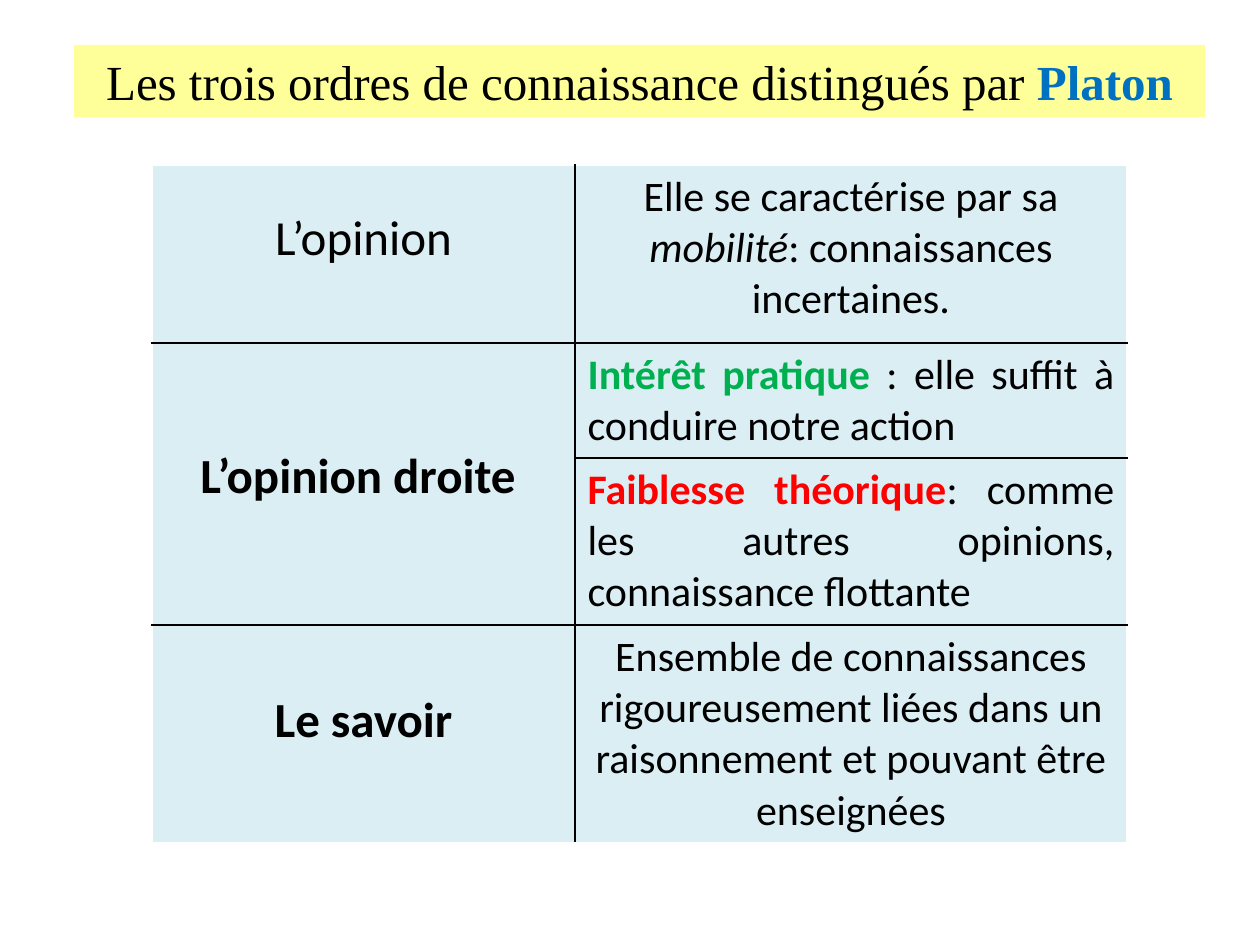
"""Build a slide with a table of Plato's three orders of knowledge."""
import pptx
import pptx.dml.color
import pptx.enum.text
import pptx.oxml
import pptx.oxml.ns
import pptx.util

RGBColor = pptx.dml.color.RGBColor
ALIGN = pptx.enum.text.PP_ALIGN
PX = 914400 / 126

BLACK = RGBColor(0x00, 0x00, 0x00)
WHITE = RGBColor(0xFF, 0xFF, 0xFF)
YELLOW = RGBColor(0xFF, 0xFF, 0x99)
PALE_BLUE = RGBColor(0xDB, 0xEE, 0xF4)
BLUE = RGBColor(0x00, 0x70, 0xC0)
GREEN = RGBColor(0x00, 0xB0, 0x50)
RED = RGBColor(0xFF, 0x00, 0x00)

PLAIN = {}
BOLD = {"bold": True}
ITALIC = {"italic": True}

TITLE = [("Les trois ordres de connaissance distingués par ", PLAIN),
         ("Platon", {"bold": True, "color": BLUE})]
TITLE_BOX = (74, 45, 1131, 72)

TABLE_LEFT, TABLE_TOP = 152, 165
COLUMN_WIDTHS = [423, 552]
ROW_HEIGHTS = [178, 115, 167, 217]

ORDERS = [
    (0, 44, [("L’opinion", PLAIN)]),
    (1, 104, [("L’opinion droite ", BOLD)]),
    (3, 66, [("Le savoir", BOLD)]),
]
DESCRIPTIONS = [
    (ALIGN.CENTER, [("Elle se caractérise par sa ", PLAIN), ("mobilité", ITALIC),
                    (": connaissances incertaines.", PLAIN)]),
    (ALIGN.JUSTIFY, [("Intérêt pratique ", {"bold": True, "color": GREEN}),
                     (": elle suffit à conduire notre action ", PLAIN)]),
    (ALIGN.JUSTIFY, [("Faiblesse théorique", {"bold": True, "color": RED}),
                     (": comme les autres opinions, connaissance flottante ", PLAIN)]),
    (ALIGN.CENTER, [("Ensemble de connaissances rigoureusement liées dans un "
                     "raisonnement et pouvant être enseignées", PLAIN)]),
]


def px(length):
    return pptx.util.Emu(round(length * PX))


def write_text(text_frame, runs, font_name, size, alignment):
    paragraph = text_frame.paragraphs[0]
    paragraph.alignment = alignment
    paragraph.font.name = font_name
    paragraph.font.size = pptx.util.Pt(size)
    for text, style in runs:
        run = paragraph.add_run()
        run.text = text
        run.font.bold = style.get("bold", False)
        run.font.italic = style.get("italic", False)
        run.font.color.rgb = style.get("color", BLACK)


def add_border(cell, side, color):
    properties = cell._tc.get_or_add_tcPr()
    properties.append(pptx.oxml.parse_xml(
        f'<a:ln{side} {pptx.oxml.ns.nsdecls("a")} w="12700"><a:solidFill>'
        f'<a:srgbClr val="{color}"/></a:solidFill></a:ln{side}>'))


def format_cell(table, row, column):
    cell = table.cell(row, column)
    outer_edges = {"L": column == 0, "R": column == len(COLUMN_WIDTHS) - 1,
                   "T": row == 0, "B": row == len(ROW_HEIGHTS) - 1}
    for side, is_outer in outer_edges.items():
        if not (cell.is_spanned and side == "T"):
            add_border(cell, side, WHITE if is_outer else BLACK)
    cell.fill.solid()
    cell.fill.fore_color.rgb = PALE_BLUE


def add_title(slide):
    title = slide.shapes.title
    title.left, title.top, title.width, title.height = map(px, TITLE_BOX)
    title.fill.solid()
    title.fill.fore_color.rgb = YELLOW
    text_frame = title.text_frame
    text_frame.auto_size = pptx.enum.text.MSO_AUTO_SIZE.NONE
    text_frame.vertical_anchor = pptx.enum.text.MSO_ANCHOR.TOP
    write_text(text_frame, TITLE, "Times New Roman", 28, ALIGN.CENTER)


def add_orders_table(slide):
    table = slide.shapes.add_table(
        len(ROW_HEIGHTS), len(COLUMN_WIDTHS), px(TABLE_LEFT), px(TABLE_TOP),
        px(sum(COLUMN_WIDTHS)), px(sum(ROW_HEIGHTS))).table
    table.first_row = table.horz_banding = False
    for column, width in zip(table.columns, COLUMN_WIDTHS):
        column.width = px(width)
    for row, height in zip(table.rows, ROW_HEIGHTS):
        row.height = px(height)
    table.cell(1, 0).merge(table.cell(2, 0))
    for row in range(len(ROW_HEIGHTS)):
        for column in range(len(COLUMN_WIDTHS)):
            format_cell(table, row, column)
    for row, margin_top, runs in ORDERS:
        cell = table.cell(row, 0)
        cell.margin_top = px(margin_top)
        write_text(cell.text_frame, runs, "Calibri", 28, ALIGN.CENTER)
    for row, (alignment, runs) in enumerate(DESCRIPTIONS):
        write_text(table.cell(row, 1).text_frame, runs, "Calibri", 24, alignment)


def main():
    presentation = pptx.Presentation()
    presentation.slide_width, presentation.slide_height = px(1260), px(945)
    slide = presentation.slides.add_slide(presentation.slide_layouts.get_by_name("Title Only"))
    add_orders_table(slide)
    add_title(slide)
    presentation.save("out.pptx")


if __name__ == "__main__":
    main()
